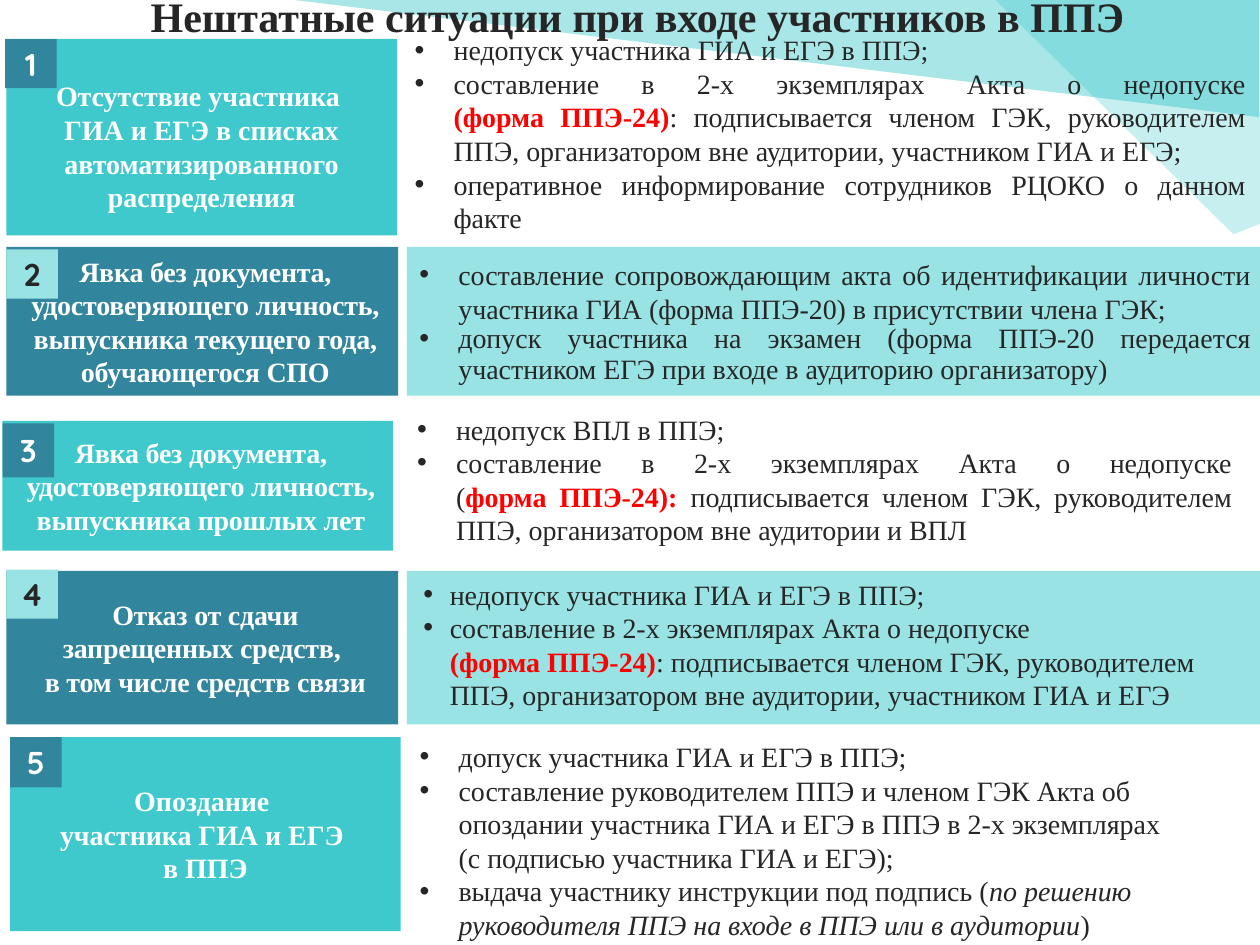
from copy import deepcopy
from dataclasses import dataclass

from lxml import etree
from pptx import Presentation
from pptx.dml.color import RGBColor
from pptx.enum.shapes import MSO_SHAPE
from pptx.enum.text import MSO_ANCHOR, MSO_AUTO_SIZE, PP_ALIGN
from pptx.oxml.ns import qn
from pptx.util import Inches, Pt

RECTANGLE = MSO_SHAPE.RECTANGLE
TOP, MIDDLE = MSO_ANCHOR.TOP, MSO_ANCHOR.MIDDLE
LEFT, CENTER, JUSTIFY = PP_ALIGN.LEFT, PP_ALIGN.CENTER, PP_ALIGN.JUSTIFY
NO_FIT, GROW = MSO_AUTO_SIZE.NONE, MSO_AUTO_SIZE.SHAPE_TO_FIT_TEXT


@dataclass(frozen=True)
class Theme:
    ink: str = "262626"
    white: str = "FFFFFF"
    alert: str = "FF0000"
    turquoise: str = "40C9CC"
    blue: str = "31859C"
    pale: str = "9AE3E4"
    accent: str = "20C0C4"
    text_font: str = "Times New Roman"
    number_font: str = "Quicksand"
    title_size: int = 24
    text_size: int = 16
    number_size: int = 18


theme = Theme()


def write(frame, paragraphs, size=theme.text_size, font=theme.text_font, color=theme.ink,
          bold=False, align=CENTER, anchor=MIDDLE, fit=NO_FIT, indent=0, hanging=0,
          tracking=0, spacing=None):
    """Fill a text frame; each paragraph is a list of (text, format changes) spans."""
    frame.word_wrap, frame.vertical_anchor, frame.auto_size = True, anchor, fit
    for number, spans in enumerate(paragraphs):
        para = frame.paragraphs[0] if number == 0 else frame.add_paragraph()
        para.alignment = align
        para.space_before = Pt(0)
        para.line_spacing = spacing[number] if spacing else 1.0
        properties = para._p.get_or_add_pPr()
        properties.set("marL", str(Inches(indent)))
        properties.set("indent", str(-Inches(hanging)))
        if hanging:
            etree.SubElement(properties, qn("a:buFont")).set("typeface", "Arial")
            etree.SubElement(properties, qn("a:buChar")).set("char", "•")
        for text, changes in spans:
            for part, line in enumerate(text.split("\n")):
                if part:
                    para.add_line_break()
                    para._p[-1].append(deepcopy(span._r.rPr))
                if not line:
                    continue
                span = para.add_run()
                span.text = line
                span.font.size = Pt(size)
                span.font.name = font
                span.font.bold = changes.get("bold", bold)
                span.font.italic = changes.get("italic", False)
                span.font.color.rgb = RGBColor.from_string(changes.get("color", color))
                if tracking:
                    span._r.get_or_add_rPr().set("spc", str(tracking))


def add_block(page, place, fill):
    """Add a plain filled rectangle."""
    block = page.shapes.add_shape(RECTANGLE, *map(Inches, place))
    block.shadow.inherit = False
    block.fill.solid()
    block.fill.fore_color.rgb = RGBColor.from_string(fill)
    block.line.fill.background()
    return block


deck = Presentation()
deck.slide_width, deck.slide_height = Inches(10), Inches(7.5)
page = deck.slides.add_slide(deck.slide_layouts.get_by_name("Comparison"))
title, *list_boxes = list(page.placeholders)

# Translucent background triangles
triangles = [
    ([(2.17, -0.02), (9.99, 0.93), (9.99, -0.03)], 39),
    ([(10.04, 1.76), (9.79, 1.86), (7.9, 0), (10.03, 0), (10.03, 1.78)], 25),
]
for points, opacity in triangles:
    corners = [(Inches(x), Inches(y)) for x, y in points]
    builder = page.shapes.build_freeform(*corners[0])
    builder.add_line_segments(corners[1:], close=True)
    triangle = builder.convert_to_shape()
    triangle.shadow.inherit = False
    triangle.fill.solid()
    triangle.fill.fore_color.rgb = RGBColor.from_string(theme.accent)
    tint = triangle._element.spPr.find(qn("a:solidFill"))[0]
    etree.SubElement(tint, qn("a:alpha")).set("val", str(opacity * 1000))
    triangle.line.fill.background()

# Title, above the triangles
page.shapes._spTree.append(title._element)
title.left, title.top, title.width, title.height = map(Inches, (0.16, -0.34, 9.8, 0.93))
write(title.text_frame, [[("Нештатные ситуации при входе участников в ППЭ", {})]],
      size=theme.title_size, bold=True)

# Content of the five situations
alert = {"color": theme.alert, "bold": True}
no_entry = [("недопуск участника ГИА и ЕГЭ в ППЭ;", {})]
act = "составление в 2-х экземплярах Акта о недопуске\n"
signed = (": подписывается членом ГЭК, руководителем ППЭ, "
          "организатором вне аудитории, участником ГИА и ЕГЭ")
no_document = "Явка без документа, удостоверяющего личность, выпускника "
tight = {"indent": 0.05, "tracking": -10}

situations = [
    {"label": "Отсутствие участника \nГИА и ЕГЭ в списках автоматизированного распределения",
     "label_at": (0.05, 0.31, 3.1, 1.56), "label_format": {}, "badge_at": (0.04, 0.31, 0.41, 0.39),
     "list_at": (3.19, 0.21, 6.8, 1.72), "list_format": {"align": JUSTIFY, "hanging": 0.31},
     "steps": [no_entry,
               [(act, {}), ("(форма ППЭ-24)", alert), (signed + ";", {})],
               [("оперативное информирование сотрудников РЦОКО о данном факте", {})]]},
    {"label": no_document + "текущего года, обучающегося СПО",
     "label_at": (0.05, 1.96, 3.11, 1.18), "label_format": tight, "badge_at": (0.05, 1.98, 0.41, 0.39),
     "panel_at": (3.23, 1.96, 6.8, 1.18),
     "list_format": {"align": JUSTIFY, "hanging": 0.31, "spacing": (1.0, 0.9)},
     "steps": [[("составление сопровождающим акта об идентификации личности участника ГИА "
                 "(форма ППЭ-20) в\u00a0присутствии члена ГЭК;", {})],
               [("допуск участника на экзамен (форма ППЭ-20 передается участником ЕГЭ "
                 "при входе в аудиторию организатору)", {})]]},
    {"label": no_document + "прошлых лет",
     "label_at": (0.02, 3.34, 3.1, 1.03), "label_format": tight, "badge_at": (0.02, 3.36, 0.41, 0.43),
     "list_at": (3.21, 3.22, 6.67, 1.18), "list_format": {"align": JUSTIFY, "hanging": 0.31},
     "steps": [[("недопуск ВПЛ в ППЭ;", {})],
               [(act + "(", {}), ("форма ППЭ-24): ", alert),
                ("подписывается членом ГЭК, руководителем ППЭ, "
                 "организатором вне аудитории и ВПЛ", {})]]},
    {"label": "Отказ от сдачи\nзапрещенных средств, \nв том числе средств связи",
     "label_at": (0.05, 4.53, 3.11, 1.22), "label_format": tight, "badge_at": (0.05, 4.52, 0.41, 0.39),
     "panel_at": (3.23, 4.53, 6.79, 1.22),
     "list_at": (3.16, 4.53, 6.9, 1.18), "list_format": {"align": LEFT, "hanging": 0.21},
     "steps": [no_entry, [(act, {}), ("(форма ППЭ-24)", alert), (signed, {})]]},
    {"label": "Опоздание \nучастника ГИА и ЕГЭ \nв ППЭ",
     "label_at": (0.08, 5.85, 3.1, 1.54), "label_format": {}, "badge_at": (0.08, 5.85, 0.41, 0.4),
     "list_at": (3.23, 5.82, 6.77, 1.72), "list_format": {"align": LEFT, "hanging": 0.31},
     "steps": [[("допуск участника ГИА и ЕГЭ в ППЭ;", {})],
               [("составление руководителем ППЭ и членом ГЭК Акта об опоздании участника ГИА и ЕГЭ "
                 "в ППЭ в 2-х экземплярах (с\u00a0подписью участника ГИА и ЕГЭ);", {})],
               [("выдача участнику инструкции под подпись (", {}),
                ("по решению руководителя ППЭ на входе в ППЭ или в аудитории", {"italic": True}),
                (")", {})]]},
]

# Rows: panel, label, list of steps, numbered badge
free_boxes = iter(list_boxes)
for number, row in enumerate(situations, start=1):
    odd = number % 2 == 1
    if "panel_at" in row:
        panel = add_block(page, row["panel_at"], theme.pale)

    label = add_block(page, row["label_at"], theme.turquoise if odd else theme.blue)
    write(label.text_frame, [[(row["label"], {})]], color=theme.white, bold=True,
          **row["label_format"])
    if number == 1:
        label.text_frame.margin_top = Inches(0.19)  # keeps the text clear of the badge

    if "list_at" in row:
        box = next(free_boxes)
        page.shapes._spTree.append(box._element)
        box.left, box.top, box.width, box.height = map(Inches, row["list_at"])
        write(box.text_frame, row["steps"], indent=0.31, anchor=TOP, fit=GROW,
              **row["list_format"])
    else:
        write(panel.text_frame, row["steps"], indent=0.31, **row["list_format"])

    badge = add_block(page, row["badge_at"], theme.blue if odd else theme.pale)
    write(badge.text_frame, [[(str(number), {})]], size=theme.number_size,
          font=theme.number_font, color=theme.white if odd else theme.ink, bold=True)

deck.save("out.pptx")
